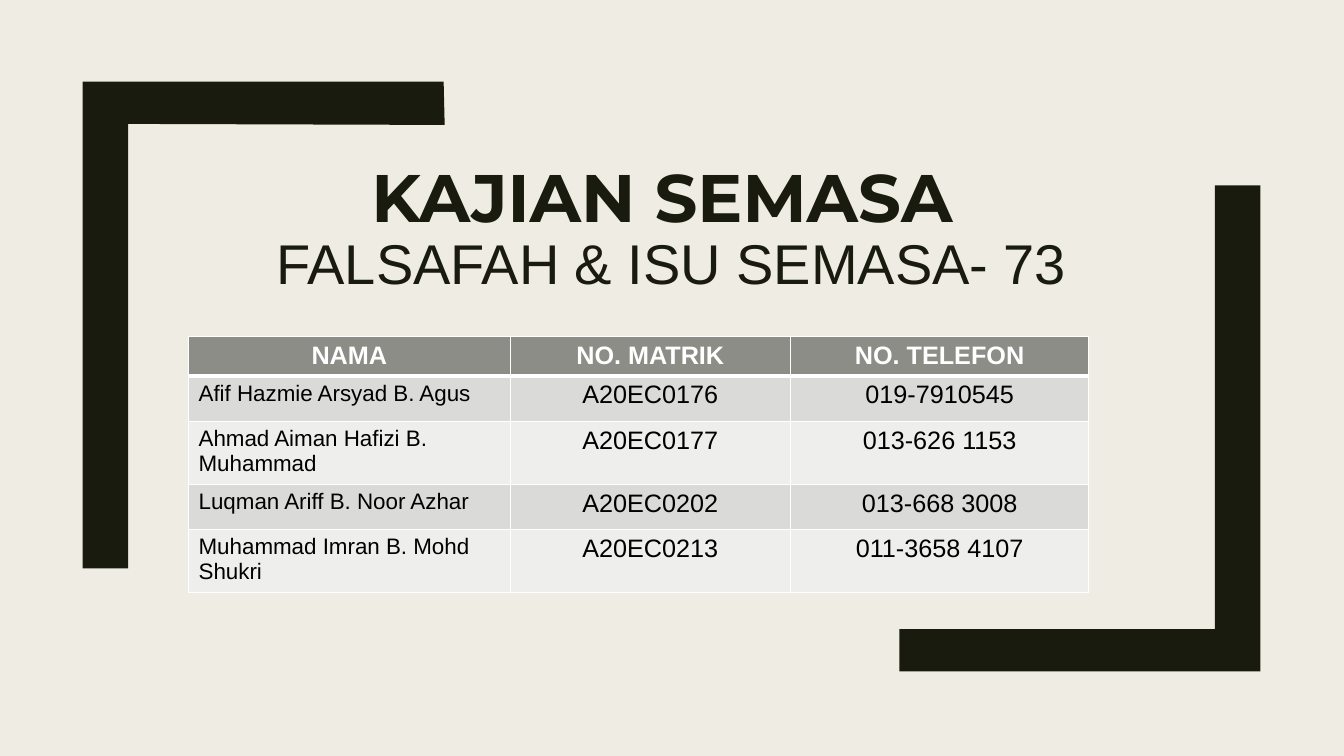
"""Build the title slide with corner brackets and a member table."""
from lxml import etree
from pptx import Presentation
from pptx.dml.color import RGBColor
from pptx.enum.text import MSO_ANCHOR, PP_ALIGN
from pptx.oxml.ns import qn
from pptx.util import Inches, Pt

CENTER, LEFT, BOTTOM = PP_ALIGN.CENTER, PP_ALIGN.LEFT, MSO_ANCHOR.BOTTOM

THEME = {
    "background": "EFEDE3", "ink": "191B0E", "header": "8C8D86",
    "bands": ["DADBD9", "EEEEED"], "white": "FFFFFF", "black": "000000",
    "title_font": "Montserrat", "body_font": "Arial",
    "title_size": 48, "subtitle_size": 40, "table_size": 18, "name_size": 16,
}


def add_run(p, text, font, size, color, bold=False):
    r = p.add_run()
    r.text = text
    for key, value in {"name": font, "size": Pt(size), "bold": bold}.items():
        setattr(r.font, key, value)
    r.font.color.rgb = RGBColor.from_string(color)


def add_border(cell, side, width):
    ln = etree.SubElement(cell._tc.get_or_add_tcPr(), qn(f"a:ln{side}"), w=str(Pt(width)))
    fill = etree.SubElement(ln, qn("a:solidFill"))
    etree.SubElement(fill, qn("a:srgbClr"), val=THEME["white"])


prs = Presentation()
prs.slide_width, prs.slide_height = Inches(13.33), Inches(7.5)
s = prs.slides.add_slide(prs.slide_layouts[6])
s.background.fill.solid()
s.background.fill.fore_color.rgb = RGBColor.from_string(THEME["background"])

brackets = [
    [(12.05, 1.84), (12.5, 1.84), (12.5, 6.66), (8.92, 6.66), (8.92, 6.24), (12.05, 6.24)],
    [(1.27, 5.64), (0.82, 5.64), (0.82, 0.81), (4.4, 0.81), (4.41, 1.24), (1.27, 1.23)],
]
for corners in brackets:
    points = [(Inches(x), Inches(y)) for x, y in corners]
    fb = s.shapes.build_freeform(*points[0])
    fb.add_line_segments(points[1:], close=True)
    sp = fb.convert_to_shape()
    sp.shadow.inherit = False
    sp.fill.solid()
    sp.fill.fore_color.rgb = RGBColor.from_string(THEME["ink"])
    sp.line.fill.background()

title = s.shapes.add_textbox(Inches(2.32), Inches(1.45), Inches(8.68), Inches(1.52))
tf = title.text_frame
for key, value in {"word_wrap": True, "vertical_anchor": BOTTOM, "margin_bottom": Inches(0.03)}.items():
    setattr(tf, key, value)
p = tf.paragraphs[0]
p.alignment, p.line_spacing = CENTER, 0.89
add_run(p, "KAJIAN SEMASA ", THEME["title_font"], THEME["title_size"], THEME["ink"], True)
p.add_line_break()
add_run(p, "FALSAFAH & ISU SEMASA- 73", THEME["body_font"], THEME["subtitle_size"], THEME["ink"])

members = [
    ("NAMA", "NO. MATRIK", "NO. TELEFON"),
    ("Afif Hazmie Arsyad B. Agus", "A20EC0176", "019-7910545"),
    ("Ahmad Aiman Hafizi B. Muhammad", "A20EC0177", "013-626 1153"),
    ("Luqman Ariff B. Noor Azhar", "A20EC0202", "013-668 3008"),
    ("Muhammad Imran B. Mohd Shukri", "A20EC0213", "011-3658 4107"),
]
col_widths = [3.19, 2.78, 2.96]
row_heights = [0.37, 0.45, 0.62, 0.45, 0.62]
table = s.shapes.add_table(
    len(members), len(col_widths), Inches(1.87), Inches(3.34),
    Inches(sum(col_widths)), Inches(sum(row_heights))).table
for col, width in zip(table.columns, col_widths):
    col.width = Inches(width)
for row, height in zip(table.rows, row_heights):
    row.height = Inches(height)

cell_format = {"margin_left": Inches(0.1), "margin_right": Inches(0.1),
               "margin_top": Inches(0.05), "margin_bottom": Inches(0.04)}
for i, member in enumerate(members):
    is_header = i == 0
    fill = THEME["header"] if is_header else THEME["bands"][(i - 1) % 2]
    color = THEME["white"] if is_header else THEME["black"]
    for j, text in enumerate(member):
        is_name = j == 0 and not is_header
        cell = table.cell(i, j)
        for key, value in cell_format.items():
            setattr(cell, key, value)
        for side in "LRTB":
            thick = (is_header and side == "B") or (i == 1 and side == "T")
            add_border(cell, side, 3 if thick else 1)
        cell.fill.solid()
        cell.fill.fore_color.rgb = RGBColor.from_string(fill)
        p = cell.text_frame.paragraphs[0]
        p.alignment = LEFT if is_name else CENTER
        size = THEME["name_size"] if is_name else THEME["table_size"]
        add_run(p, text, THEME["body_font"], size, color, is_header)

prs.save("out.pptx")
